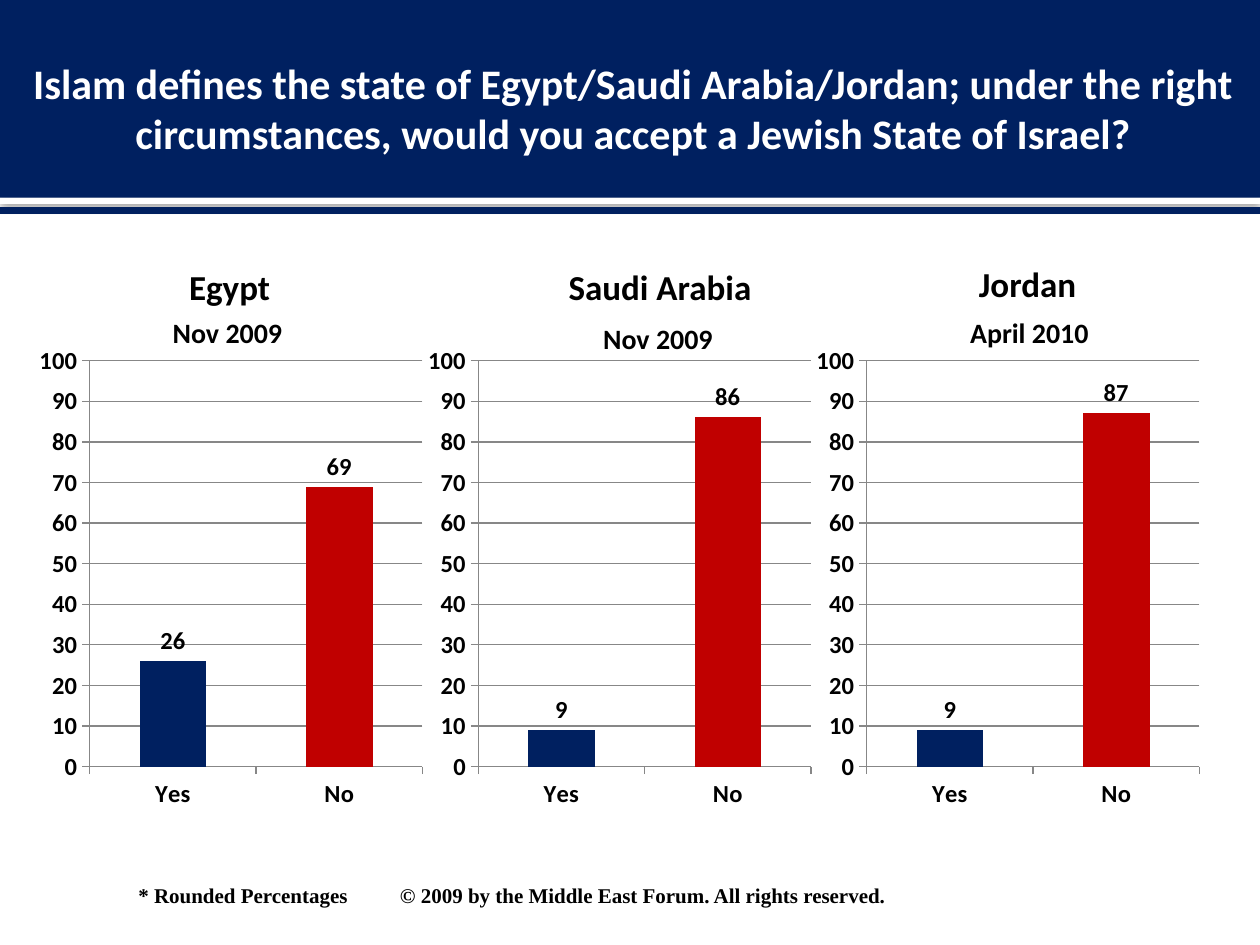
from dataclasses import dataclass

from lxml.etree import SubElement
from pptx import Presentation
from pptx.chart.data import CategoryChartData
from pptx.dml.color import RGBColor as RGB
from pptx.enum.chart import XL_CHART_TYPE as CHART, XL_LABEL_POSITION as LABEL, XL_TICK_MARK as TICK
from pptx.enum.shapes import MSO_CONNECTOR as LINE, MSO_SHAPE as SHAPE
from pptx.enum.text import MSO_ANCHOR as ANCHOR, PP_ALIGN as ALIGN
from pptx.oxml import parse_xml
from pptx.oxml.ns import nsdecls, qn
from pptx.util import Pt


@dataclass(frozen=True)
class Theme:
    navy: RGB = RGB(0x00, 0x20, 0x60)
    red: RGB = RGB(0xC0, 0x00, 0x00)
    white: RGB = RGB(0xFF, 0xFF, 0xFF)
    black: RGB = RGB(0, 0, 0)
    grid: RGB = RGB(0x87, 0x87, 0x87)
    font: str = "Calibri"
    note_font: str = "Times New Roman"
    title: int = 24
    country: int = 20
    date: int = 16
    chart: int = 14
    note: int = 12


class SlideBuilder:
    def __init__(self, slide, theme):
        self.s = slide
        self.theme = theme

    def style(self, font, size, color=None, name=None):
        font.name = name or self.theme.font
        font.size = Pt(size)
        font.bold = True
        font.color.rgb = color or self.theme.black

    def place(self, sp, x, y, w, h):
        sp.left, sp.top, sp.width, sp.height = Pt(x), Pt(y), Pt(w), Pt(h)

    def band(self, y, h, color, shadow=False):
        sp = self.s.shapes.add_shape(SHAPE.RECTANGLE, 0, Pt(y), Pt(720), Pt(h))
        sp.shadow.inherit = False
        sp.fill.solid()
        sp.fill.fore_color.rgb = color
        sp.line.fill.background()
        if shadow:
            effects = sp.element.spPr.find(qn("a:effectLst"))
            effects.append(parse_xml(
                f'<a:outerShdw {nsdecls("a")} blurRad="63500" dist="10160" dir="5400000">'
                '<a:srgbClr val="000000"><a:alpha val="60000"/></a:srgbClr></a:outerShdw>'))

    def rule(self, y, width):
        cn = self.s.shapes.add_connector(LINE.STRAIGHT, 0, Pt(y), Pt(720), Pt(y))
        cn.line.color.rgb = self.theme.navy
        cn.line.width = Pt(width)
        SubElement(cn.element.spPr, qn("a:effectLst"))

    def title(self, text, x, y, w, h):
        sp = self.s.shapes.title
        sp.element.getparent().append(sp.element)  # in front of the band
        self.place(sp, x, y, w, h)
        tf = sp.text_frame
        tf.text = text
        tf.word_wrap = True
        tf.vertical_anchor = ANCHOR.MIDDLE
        tf.margin_right = Pt(3.6)
        p = tf.paragraphs[0]
        p.alignment = ALIGN.CENTER
        self.style(p.runs[0].font, self.theme.title, self.theme.white)

    def text(self, text, x, y, w, h, size, align=ALIGN.CENTER, wrap=True,
             anchor=ANCHOR.TOP, name=None, margins=None, tab=None):
        sp = self.s.shapes.add_textbox(Pt(x), Pt(y), Pt(w), Pt(h))
        tf = sp.text_frame
        tf.text = text
        tf.word_wrap = wrap
        tf.vertical_anchor = anchor
        if margins:
            tf.margin_left, tf.margin_top, tf.margin_right, tf.margin_bottom = map(Pt, margins)
        p = tf.paragraphs[0]
        p.alignment = align
        if tab:
            tabs = SubElement(p._p.get_or_add_pPr(), qn("a:tabLst"))
            SubElement(tabs, qn("a:tab"), pos=str(Pt(tab)), algn="l")
        for r in p.runs:
            self.style(r.font, size, name=name)

    def chart(self, values, x, y, w, h):
        data = CategoryChartData()
        data.categories = ["Yes", "No"]
        data.add_series("Series 1", values)
        chart = self.s.shapes.add_chart(
            CHART.COLUMN_CLUSTERED, Pt(x), Pt(y), Pt(w), Pt(h), data).chart
        chart.has_legend = chart.has_title = False
        self.style(chart.font, self.theme.chart)

        # Axes
        axis = chart.value_axis
        axis.minimum_scale, axis.maximum_scale, axis.major_unit = 0, 100, 10
        axis.has_major_gridlines = True
        for ax in (axis, chart.category_axis):
            ax.major_tick_mark = TICK.OUTSIDE
        for lines in (axis, chart.category_axis, axis.major_gridlines):
            lines.format.line.color.rgb = self.theme.grid
            lines.format.line.width = Pt(0.75)

        # Columns and their labels
        plot = chart.plots[0]
        plot.vary_by_categories = False
        plot.gap_width = 150
        plot.has_data_labels = True
        plot.data_labels.show_value = True
        plot.data_labels.position = LABEL.OUTSIDE_END
        series = plot.series[0]
        for fmt, color in ((series.format, self.theme.navy),
                           (series.points[1].format, self.theme.red)):
            fmt.fill.solid()
            fmt.fill.fore_color.rgb = color


def main():
    prs = Presentation()
    prs.slide_width, prs.slide_height = Pt(720), Pt(540)
    theme = Theme()
    b = SlideBuilder(prs.slides.add_slide(prs.slide_layouts[5]), theme)

    # Header
    b.band(113, 3.6, theme.white, shadow=True)
    b.band(0, 113, theme.navy)
    b.rule(120.3, 4.5)
    b.title("Islam defines the state of Egypt/Saudi Arabia/Jordan; under the right "
            "circumstances, would you accept a Jewish State of Israel?", 0, 12, 720, 99)

    # Polls: country, heading x and y, date, date x and y, date width, values
    polls = [
        ("Egypt", -30, 134, "Nov 2009", 90, 177, 80, (26, 69)),
        ("Saudi Arabia", 216, 134, "Nov 2009", 336, 180, 80, (9, 86)),
        ("Jordan", 426, 132, "April 2010", 546.5, 177, 83.5, (9, 87)),
    ]
    for i, (country, x, y, date, date_x, date_y, date_w, values) in enumerate(polls):
        b.chart(values, 18 + 222 * i, 192, 228, 276)
        b.text(country, x, y, 318, 56, theme.country, anchor=ANCHOR.MIDDLE,
               margins=(11.5, 7.2, 7.2, 3.6))
        b.text(date, date_x, date_y, date_w, 26.5, theme.date, wrap=False)

    # Footnote
    b.text("* Rounded Percentages\t© 2009 by the Middle East Forum. All rights reserved.",
           72, 501, 446, 22, theme.note, align=ALIGN.LEFT, name=theme.note_font, tab=149.5)

    prs.save("out.pptx")


if __name__ == "__main__":
    main()
